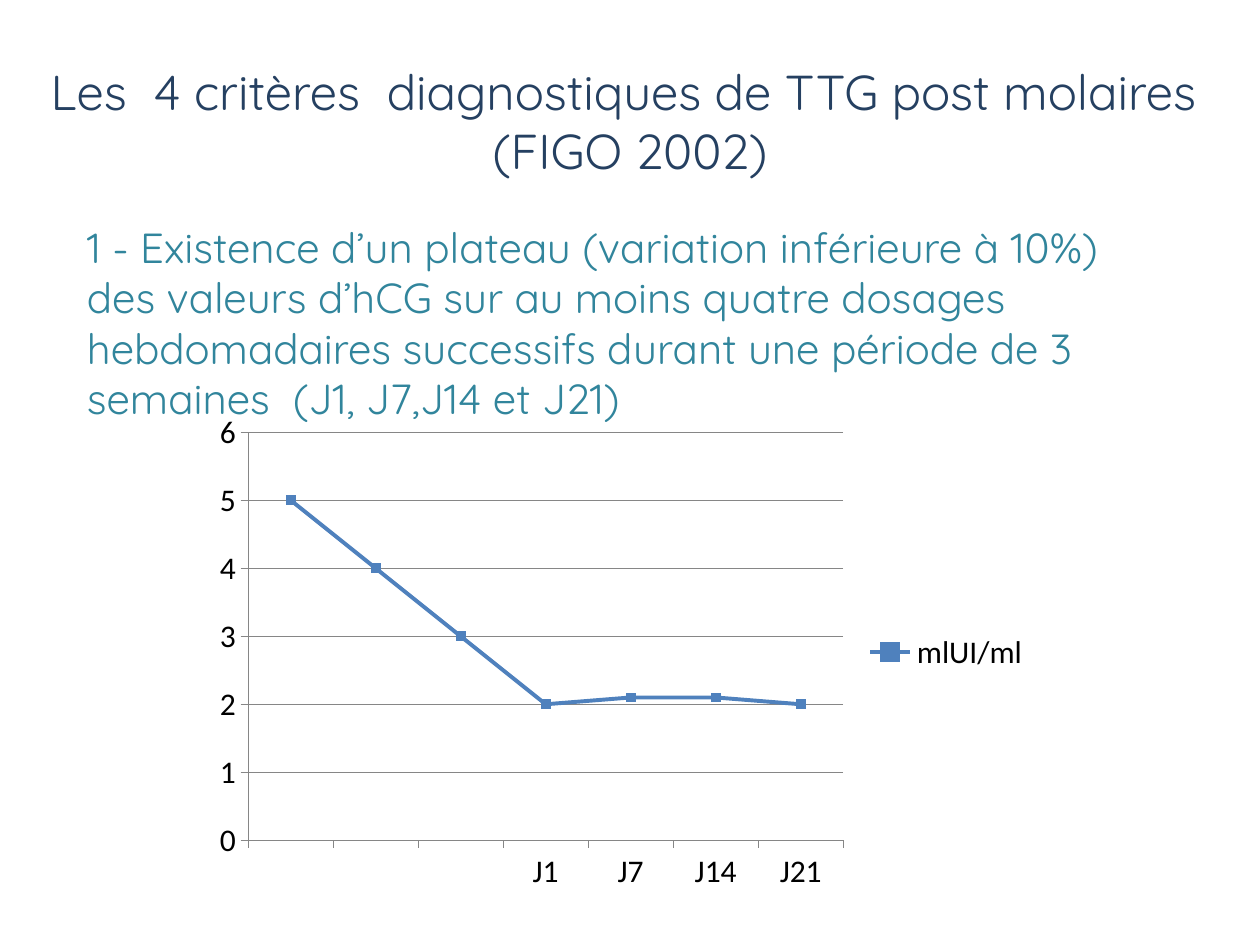
from dataclasses import dataclass

from lxml.etree import SubElement
from pptx import Presentation
from pptx.chart.data import CategoryChartData
from pptx.dml.color import RGBColor
from pptx.enum.chart import XL_CHART_TYPE as ChartType, XL_LEGEND_POSITION as LegendPosition
from pptx.enum.chart import XL_MARKER_STYLE as MarkerStyle, XL_TICK_MARK as TickMark
from pptx.enum.text import MSO_ANCHOR as Anchor, MSO_AUTO_SIZE as AutoSize, PP_ALIGN as Align
from pptx.oxml.ns import qn
from pptx.util import Pt

NAVY = RGBColor(0x25, 0x40, 0x61)
TEAL = RGBColor(0x31, 0x85, 0x9C)
BLUE = RGBColor(0x4F, 0x81, 0xBD)
GRAY = RGBColor(0x86, 0x86, 0x86)
BLACK = RGBColor(0, 0, 0)


@dataclass
class TextBlock:
    text: str
    left: float
    top: float
    width: float
    height: float
    size: float
    color: RGBColor
    align: Align
    anchor: Anchor
    bottom_inset: float = 3.6


HEADING = TextBlock(
    "Les  4 critères  diagnostiques de TTG post molaires  (FIGO 2002)",
    0, 31.7, 720, 75, 28, NAVY, Align.CENTER, Anchor.TOP)
# The bottom inset lifts the criterion clear of the chart.
CRITERION = TextBlock(
    "1 - Existence d’un plateau (variation inférieure à 10%) des valeurs d’hCG "
    "sur au moins quatre dosages hebdomadaires successifs durant une période "
    "de 3 semaines  (J1, J7,J14 et J21)",
    42.5, 167.8, 612, 85, 24, TEAL, Align.LEFT, Anchor.MIDDLE, 56)

DAYS = ["", "", "", "J1", "J7", "J14", "J21"]
HCG_LEVELS = [5, 4, 3, 2, 2.1, 2.1, 2]


def set_all(target, values: dict) -> None:
    for name, value in values.items():
        setattr(target, name, value)


def fill_placeholder(box, block: TextBlock) -> None:
    set_all(box, {"left": Pt(block.left), "top": Pt(block.top),
                  "width": Pt(block.width), "height": Pt(block.height)})
    frame = box.text_frame
    frame.text = block.text
    set_all(frame, {"word_wrap": True, "auto_size": AutoSize.NONE,
                    "vertical_anchor": block.anchor,
                    "margin_bottom": Pt(block.bottom_inset)})
    para = frame.paragraphs[0]
    properties = para._p.get_or_add_pPr()
    properties.set("marL", "0")
    properties.set("indent", "0")
    SubElement(properties, qn("a:buNone"))
    set_all(para, {"alignment": block.align, "space_before": Pt(0)})
    span = para.runs[0]
    set_all(span.font, {"name": "Quicksand", "size": Pt(block.size)})
    span.font.color.rgb = block.color


def style_line(line, color: RGBColor, width: float) -> None:
    line.color.rgb = color
    line.width = Pt(width)


def add_hcg_chart(page) -> None:
    data = CategoryChartData()
    data.categories = DAYS
    data.add_series("mlUI/ml", HCG_LEVELS)
    chart = page.shapes.add_chart(
        ChartType.LINE_MARKERS, Pt(116), Pt(230.4), Pt(480), Pt(284.4), data).chart
    set_all(chart, {"has_title": False, "has_legend": True})
    set_all(chart.legend, {"position": LegendPosition.RIGHT, "include_in_layout": False})
    set_all(chart.font, {"name": "Calibri", "size": Pt(18)})
    chart.font.color.rgb = BLACK

    for axis in (chart.category_axis, chart.value_axis):
        set_all(axis, {"major_tick_mark": TickMark.OUTSIDE,
                       "minor_tick_mark": TickMark.NONE})
        style_line(axis.format.line, GRAY, 0.75)
    set_all(chart.value_axis, {"minimum_scale": 0, "maximum_scale": 6,
                               "major_unit": 1, "has_major_gridlines": True})
    style_line(chart.value_axis.major_gridlines.format.line, GRAY, 0.75)

    plot = chart.plots[0]
    plot.vary_by_categories = False
    series = plot.series[0]
    series.smooth = False
    style_line(series.format.line, BLUE, 2.25)
    marker = series.marker
    set_all(marker, {"style": MarkerStyle.SQUARE, "size": 5})
    marker.format.fill.solid()
    marker.format.fill.fore_color.rgb = BLUE
    style_line(marker.format.line, BLUE, 0.75)


def main() -> None:
    deck = Presentation()
    set_all(deck, {"slide_width": Pt(720), "slide_height": Pt(540)})
    page = deck.slides.add_slide(deck.slide_layouts[1])
    fill_placeholder(page.shapes.title, HEADING)
    fill_placeholder(page.placeholders[1], CRITERION)
    add_hcg_chart(page)
    deck.save("out.pptx")


if __name__ == "__main__":
    main()
